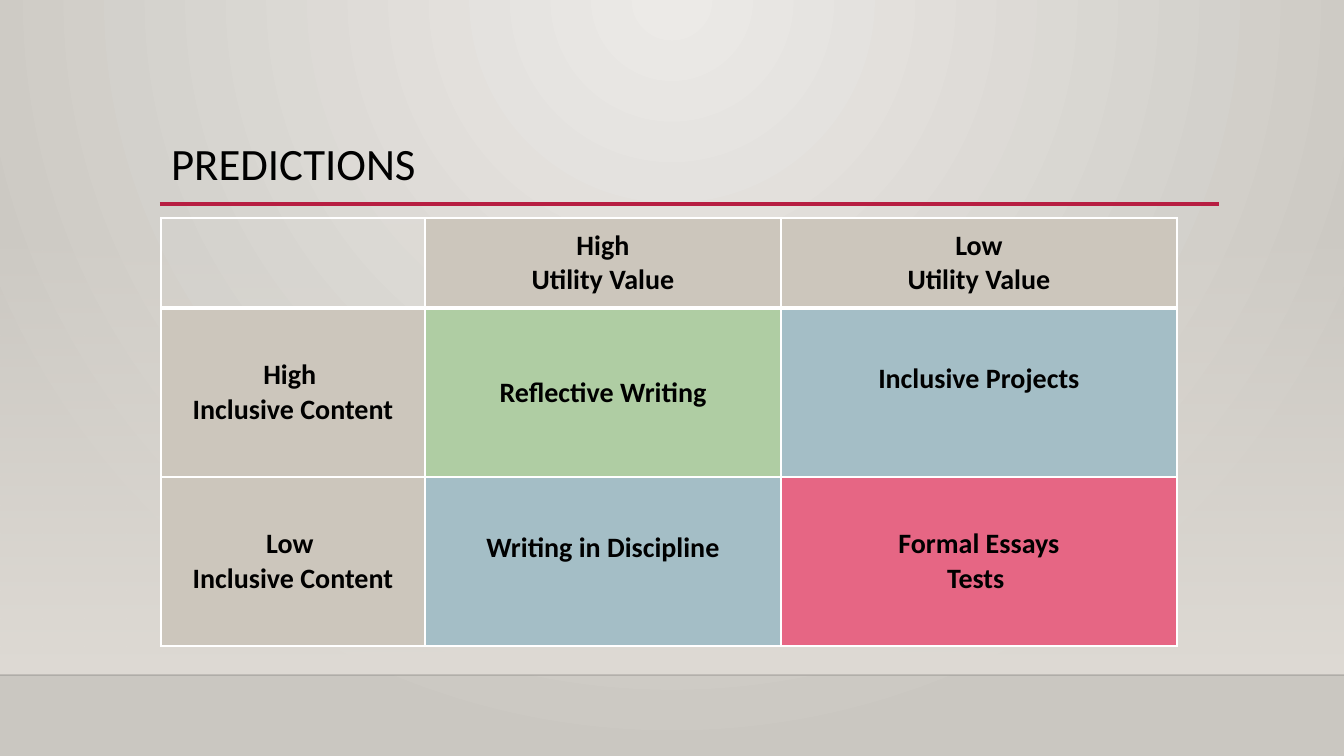
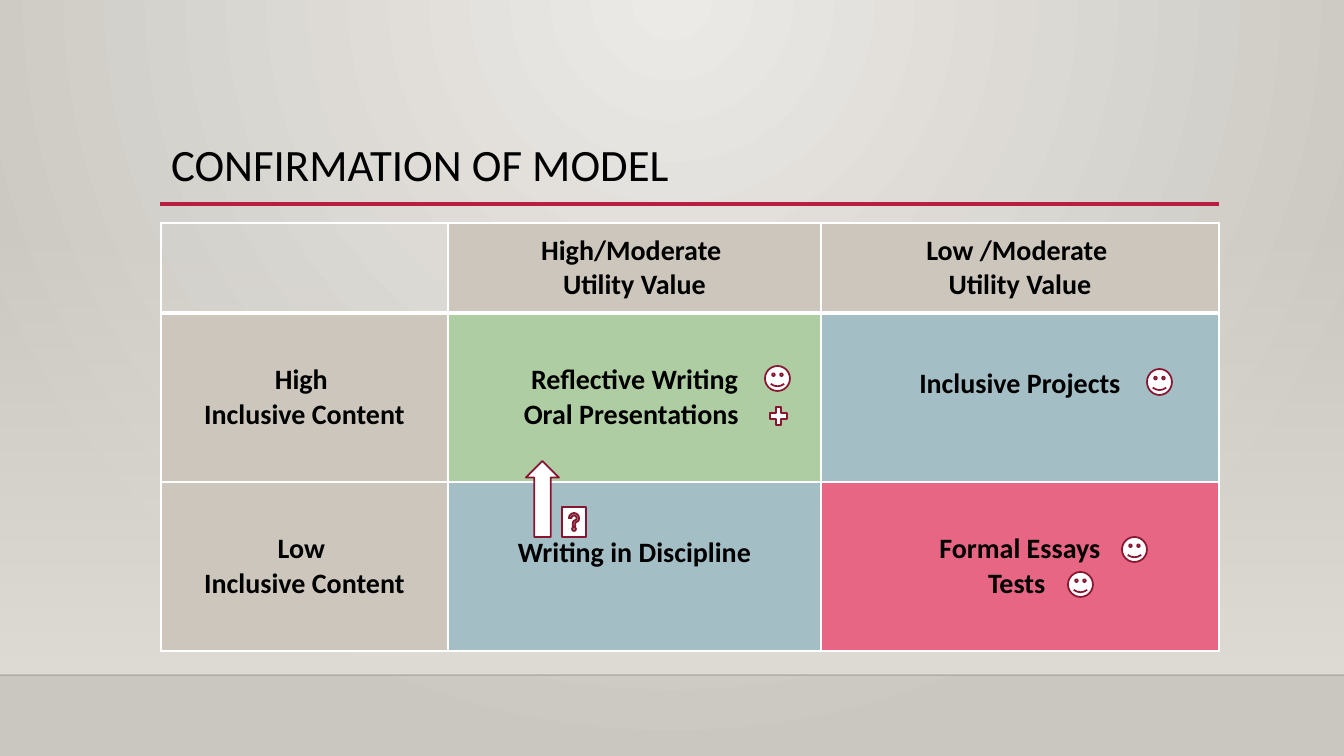
from typing import NamedTuple

from lxml.etree import SubElement
from pptx import Presentation
from pptx.dml.color import RGBColor
from pptx.enum.shapes import MSO_CONNECTOR, MSO_SHAPE
from pptx.enum.text import MSO_ANCHOR, MSO_AUTO_SIZE, PP_ALIGN
from pptx.oxml import parse_xml
from pptx.oxml.ns import nsdecls, qn
from pptx.util import Emu, Pt

SCALE = 914400 / 100.8
WIDE, HIGH = 1344, 756
FLOOR = 675
LEFT = 160
FONT = "Calibri"
ROWS = [90, 169, 169]
INSET, LIFT = 5, 28

HUES = {
    "light": "ECEAE7",
    "dark": "CAC7C1",
    "haze": "DFDBD5",
    "floor": "000001",
    "rule": "B71E42",
    "edge": "871631",
    "ink": "000000",
    "white": "FFFFFF",
    "sand": "CCC6BC",
    "green": "AFCDA3",
    "blue": "A4BEC6",
    "rose": "E66684",
}
FILLS = [
    ["", "sand", "sand"],
    ["sand", "green", "blue"],
    ["sand", "blue", "rose"],
]


class Box(NamedTuple):
    left: int
    top: int
    width: int
    height: int


class Stop(NamedTuple):
    spot: int
    hue: str
    alpha: int = 100


class Mark(NamedTuple):
    kind: MSO_SHAPE
    box: Box


class Page(NamedTuple):
    title: str
    head: Box
    top: int
    cols: list[int]
    cells: list[list[str]]
    marks: list[Mark]


PAGES = [
    Page(
        "PREDICTIONS",
        Box(161, 133, 980, 66),
        218,
        [264, 356, 396],
        [
            ["", "High\nUtility Value", "Low\nUtility Value"],
            ["High \nInclusive Content", "Reflective Writing", "Inclusive Projects"],
            ["Low \nInclusive Content", "Writing in Discipline", "Formal Essays\nTests "],
        ],
        [],
    ),
    Page(
        "CONFIRMATION OF MODEL",
        Box(161, 136, 932, 61),
        223,
        [287, 373, 398],
        [
            ["", "High/Moderate \nUtility Value", "Low /Moderate \nUtility Value"],
            [
                "High \nInclusive Content",
                "Reflective Writing\nOral Presentations ",
                "Inclusive Projects",
            ],
            ["Low \nInclusive Content", "Writing in Discipline", "Formal Essays\nTests "],
        ],
        [
            Mark(MSO_SHAPE.SMILEY_FACE, Box(765, 366, 25, 25)),
            Mark(MSO_SHAPE.SMILEY_FACE, Box(1068, 572, 25, 25)),
            Mark(MSO_SHAPE.ACTION_BUTTON_HELP, Box(562, 507, 24, 30)),
            Mark(MSO_SHAPE.MATH_PLUS, Box(767, 404, 23, 24)),
            Mark(MSO_SHAPE.UP_ARROW, Box(526, 461, 33, 76)),
            Mark(MSO_SHAPE.SMILEY_FACE, Box(1147, 369, 25, 26)),
            Mark(MSO_SHAPE.SMILEY_FACE, Box(1122, 537, 25, 25)),
        ],
    ),
]


def px(size: int) -> Emu:
    return Emu(round(size * SCALE))


def place(box: Box) -> list[Emu]:
    return [px(side) for side in box]


def rgb(name: str) -> RGBColor:
    return RGBColor.from_string(HUES[name])


def blend(host, stops: list[Stop], way: str) -> None:
    parts = "".join(
        f'<a:gs pos="{stop.spot * 1000}"><a:srgbClr val="{HUES[stop.hue]}">'
        f'<a:alpha val="{stop.alpha * 1000}"/></a:srgbClr></a:gs>'
        for stop in stops
    )
    grad = parse_xml(
        f'<a:gradFill {nsdecls("a")} rotWithShape="1">'
        f"<a:gsLst>{parts}</a:gsLst>{way}</a:gradFill>"
    )
    host.replace(host.find(qn("a:solidFill")), grad)


def rule(slide, start: int, end: int, y: int, hue: str, width: float):
    line = slide.shapes.add_connector(
        MSO_CONNECTOR.STRAIGHT, px(start), px(y), px(end), px(y)
    )
    line.line.color.rgb = rgb(hue)
    line.line.width = Pt(width)
    SubElement(line.element.spPr, qn("a:effectLst"))
    return line


def stage(layout, slide) -> None:
    for spare in list(layout.placeholders)[1:]:
        spare.element.getparent().remove(spare.element)
    layout.background.fill.solid()
    blend(
        layout.element.find(".//" + qn("p:bgPr")),
        [Stop(0, "light"), Stop(100, "dark")],
        '<a:path path="circle"><a:fillToRect l="43000" t="0" r="43000" b="100000"/></a:path>',
    )
    band = slide.shapes.add_shape(
        MSO_SHAPE.RECTANGLE, *place(Box(0, 223, WIDE, FLOOR - 223))
    )
    band.shadow.inherit = False
    band.line.fill.background()
    band.fill.solid()
    blend(
        band.element.spPr,
        [Stop(0, "haze", 0), Stop(100, "haze")],
        '<a:lin ang="5400000" scaled="0"/>',
    )
    floor = rule(slide, 0, WIDE, FLOOR, "floor", 1)
    tint = floor.element.spPr.find(".//" + qn("a:srgbClr"))
    SubElement(tint, qn("a:alpha")).set("val", "20000")
    under = rule(slide, LEFT, 1219, 204, "rule", 2.5)
    for part in (band, floor, under):
        layout.shapes.element.append(part.element)


def style(item, size: int, bold: bool, align: PP_ALIGN) -> None:
    item.alignment = align
    item.font.name = FONT
    item.font.size = Pt(size)
    item.font.bold = bold
    item.font.color.rgb = rgb("ink")


def title(slide, page: Page) -> None:
    head = slide.shapes.title
    head.left, head.top, head.width, head.height = place(page.head)
    frame = head.text_frame
    frame.text = page.title
    frame.word_wrap = True
    frame.auto_size = MSO_AUTO_SIZE.NONE
    frame.vertical_anchor = MSO_ANCHOR.MIDDLE
    style(frame.paragraphs[0], 32, False, PP_ALIGN.LEFT)
    frame.paragraphs[0].line_spacing = 0.9


def border(cell, side: str, width: int) -> None:
    line = SubElement(cell._tc.get_or_add_tcPr(), qn(f"a:ln{side}"))
    line.set("w", str(Pt(width)))
    fill = SubElement(line, qn("a:solidFill"))
    SubElement(fill, qn("a:srgbClr")).set("val", HUES["white"])


def paint(cell, text: str, hue: str, row: int) -> None:
    for side in "LRTB":
        thick = (row, side) in ((0, "B"), (1, "T"))
        border(cell, side, 3 if thick else 1)
    if hue:
        cell.fill.solid()
        cell.fill.fore_color.rgb = rgb(hue)
    else:
        cell.fill.background()
    cell.vertical_anchor = MSO_ANCHOR.MIDDLE
    cell.margin_bottom = px(INSET + LIFT if hue == "blue" else INSET)
    cell.text_frame.text = text
    for item in cell.text_frame.paragraphs:
        style(item, 20, True, PP_ALIGN.CENTER)


def grid(slide, page: Page) -> None:
    box = Box(LEFT + 1, page.top, sum(page.cols), sum(ROWS))
    table = slide.shapes.add_table(len(ROWS), len(page.cols), *place(box)).table
    table.first_row = table.horz_banding = False
    for col, width in zip(table.columns, page.cols):
        col.width = px(width)
    for y, height in enumerate(ROWS):
        table.rows[y].height = px(height)
        for x, text in enumerate(page.cells[y]):
            paint(table.cell(y, x), text, FILLS[y][x], y)


def stamp(slide, mark: Mark) -> None:
    shape = slide.shapes.add_shape(mark.kind, *place(mark.box))
    shape.shadow.inherit = False
    shape.fill.solid()
    shape.fill.fore_color.rgb = rgb("white")
    shape.line.color.rgb = rgb("edge")
    shape.line.width = Pt(1.25)


def main() -> None:
    deck = Presentation()
    deck.slide_width, deck.slide_height = px(WIDE), px(HIGH)
    layout = deck.slide_layouts[5]
    for count, page in enumerate(PAGES):
        slide = deck.slides.add_slide(layout)
        if count == 0:
            stage(layout, slide)
        title(slide, page)
        grid(slide, page)
        for mark in page.marks:
            stamp(slide, mark)
    deck.save("out.pptx")


if __name__ == "__main__":
    main()
